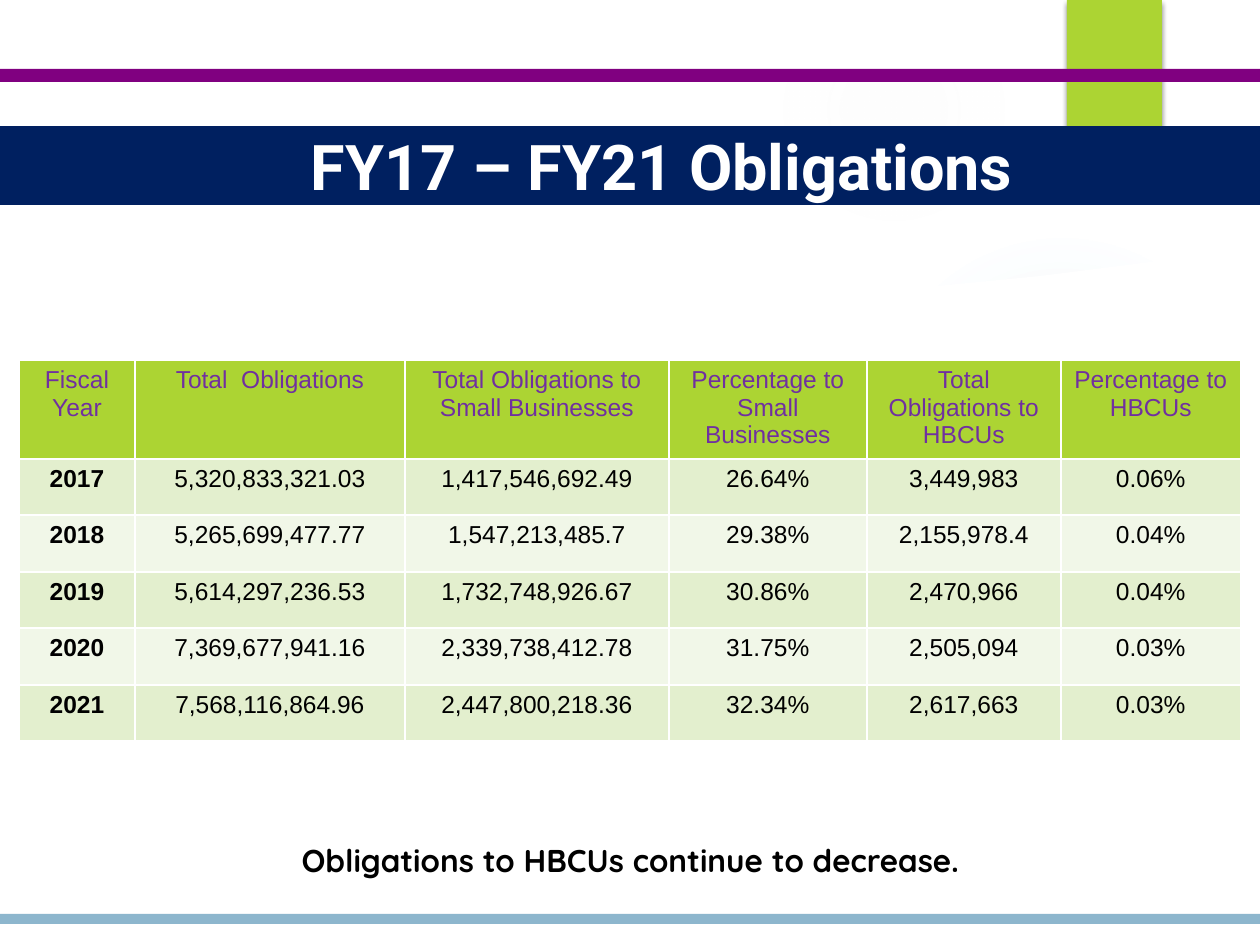
from lxml import etree
from pptx import Presentation
from pptx.dml.color import RGBColor
from pptx.enum.shapes import MSO_SHAPE
from pptx.enum.text import MSO_ANCHOR, PP_ALIGN
from pptx.oxml import parse_xml
from pptx.oxml.ns import nsdecls, qn
from pptx.util import Emu, Pt

RECTANGLE, OVAL = MSO_SHAPE.RECTANGLE, MSO_SHAPE.OVAL
CENTER = PP_ALIGN.CENTER
MIDDLE = MSO_ANCHOR.MIDDLE
EMU_PER_PX = 914400 / 126

COLORS = {
    "white": "FFFFFF", "black": "000000", "lime": "ACD433", "purple": "800080",
    "sky": "8DB6CD", "navy": "002060", "violet": "7030A0",
    "odd_row": "E3EFCE", "even_row": "F1F7E8", "aqua": "75CEEC", "mist": "F7F7F7",
}

GLOWS = [
    ("aqua", 868, 231, 388, [(0, 7), (36, 6), (69, 0)]),
    ("aqua", 0, 368, 577, [(0, 11), (36, 10), (75, 0)]),
    ("mist", 784, 0, 220, [(0, 14), (36, 7), (73, 0)]),
    ("mist", 868, 809, 136, [(0, 14), (36, 7), (66, 0)]),
    ("aqua", 0, 399, 325, [(0, 8), (36, 8), (72, 0)]),
]
SWOOSH = [(879, 267), (941, 276), (1031, 283), (1126, 288), (1203, 290), (1204, 247),
          (1139, 256), (1073, 261), (1010, 263), (950, 263), (876, 260)]
PANEL = [(67, 256), (67, 881), (1193, 881), (1193, 256), (1142, 263), (1040, 276),
         (937, 286), (837, 291), (740, 295), (597, 295), (467, 291), (349, 285),
         (218, 273), (125, 263)]
FRAME_OUTSIDE = [(0, 0), (0, 945), (1260, 945), (1260, 0)]
FRAME_INSIDE = [(1191, 876), (71, 876), (71, 71), (1191, 71)]

BARS = [
    ("lime", 1067, 0, 95, 151),
    ("purple", 0, 69, 1260, 13),
    ("sky", 0, 914, 1260, 10),
]

COLUMN_WIDTHS = [116, 270, 264, 198, 194, 180]
ROW_HEIGHTS = [99, 56, 57, 56, 57, 56]
OBLIGATIONS = [
    ["Fiscal Year", "Total  Obligations", "Total Obligations to Small Businesses",
     "Percentage to Small Businesses", "Total Obligations to HBCUs", "Percentage to HBCUs"],
    ["2017", "5,320,833,321.03", "1,417,546,692.49", "26.64%", "3,449,983", "0.06%"],
    ["2018", "5,265,699,477.77", "1,547,213,485.7", "29.38%", "2,155,978.4", "0.04%"],
    ["2019", "5,614,297,236.53", "1,732,748,926.67", "30.86%", "2,470,966", "0.04%"],
    ["2020", "7,369,677,941.16", "2,339,738,412.78", "31.75%", "2,505,094", "0.03%"],
    ["2021", "7,568,116,864.96", "2,447,800,218.36", "32.34%", "2,617,663", "0.03%"],
]

TITLE_FORMAT = {"name": "Roboto", "size": Pt(36), "bold": True}
NOTE_FORMAT = {"name": "Quicksand", "size": Pt(18), "bold": True}
CELL_FORMAT = {"name": "Arial", "size": Pt(14)}


def px(length):
    """Turn pixels into EMU."""
    return Emu(round(length * EMU_PER_PX))


def rgb(name):
    """Look up a named colour."""
    return RGBColor.from_string(COLORS[name])


def write_text(frame, text, color, formats):
    """Fill a text frame with one centred, formatted paragraph."""
    para = frame.paragraphs[0]
    para.alignment = CENTER
    span = para.add_run()
    span.text = text
    for attribute, value in formats.items():
        setattr(span.font, attribute, value)
    span.font.color.rgb = rgb(color)
    return para


def paint(shape, color):
    """Give a shape a flat fill without line or shadow."""
    shape.shadow.inherit = False
    shape.fill.solid()
    shape.fill.fore_color.rgb = rgb(color)
    shape.line.fill.background()
    return shape


def add_bar(page, color, *place):
    """Add a plain filled rectangle."""
    return paint(page.shapes.add_shape(RECTANGLE, *map(px, place)), color)


def add_glow(page, color, left, top, size, stops):
    """Add a circle that fades out from its centre."""
    glow = page.shapes.add_shape(OVAL, *map(px, (left, top, size, size)))
    glow.shadow.inherit = False
    glow.line.fill.background()
    marks = "".join(
        f'<a:gs pos="{place * 1000}"><a:srgbClr val="{COLORS[color]}">'
        f'<a:alpha val="{alpha * 1000}"/></a:srgbClr></a:gs>' for place, alpha in stops)
    glow._element.spPr.find(qn("a:prstGeom")).addnext(parse_xml(
        f'<a:gradFill {nsdecls("a")}><a:gsLst>{marks}</a:gsLst><a:path path="circle">'
        '<a:fillToRect l="50000" t="50000" r="50000" b="50000"/></a:path></a:gradFill>'))


def add_outline(page, *contours):
    """Add a white freeform made of closed contours."""
    first, *others = contours
    builder = page.shapes.build_freeform(*first[0], scale=EMU_PER_PX)
    builder.add_line_segments(first[1:], close=True)
    for contour in others:
        builder.move_to(*contour[0])
        builder.add_line_segments(contour[1:], close=True)
    return paint(builder.convert_to_shape(), "white")


def add_backdrop(page):
    """Add the faint glows and the white shapes over them."""
    for glow in GLOWS:
        add_glow(page, *glow)
    swoosh = add_outline(page, SWOOSH)
    swoosh.rotation = 350.2
    tint = swoosh._element.spPr.find(qn("a:solidFill"))[0]
    etree.SubElement(tint, qn("a:alpha"), val="20000")
    add_outline(page, PANEL)
    add_outline(page, FRAME_OUTSIDE, FRAME_INSIDE)


def add_drop_shadow(bar):
    """Give a bar a soft shadow below it."""
    effects = bar._element.spPr.find(qn("a:effectLst"))
    effects.append(parse_xml(
        f'<a:outerShdw {nsdecls("a")} blurRad="{Pt(3)}" dist="{Pt(2)}" dir="5400000" '
        f'rotWithShape="0"><a:srgbClr val="{COLORS["black"]}"><a:alpha val="45000"/>'
        '</a:srgbClr></a:outerShdw>'))


def add_title(page, text):
    """Add the title band with its indented text."""
    frame = add_bar(page, "navy", 0, 126, 1260, 79).text_frame
    frame.word_wrap = True
    frame.vertical_anchor = MIDDLE
    para = write_text(frame, text, "white", TITLE_FORMAT)
    para._p.get_or_add_pPr().set("marL", str(px(64)))


def set_borders(cell):
    """Draw white borders around a cell."""
    properties = cell._tc.get_or_add_tcPr()
    for side in "LRTB":
        line = etree.SubElement(properties, qn(f"a:ln{side}"), w=str(Pt(1)))
        fill = etree.SubElement(line, qn("a:solidFill"))
        etree.SubElement(fill, qn("a:srgbClr"), val=COLORS["white"])


def fill_cell(cell, text, row, column):
    """Write and style one table cell by its position."""
    header = row == 0
    set_borders(cell)
    cell.fill.solid()
    background = "lime" if header else "odd_row" if row % 2 else "even_row"
    cell.fill.fore_color.rgb = rgb(background)
    bold = not header and column == 0
    write_text(cell.text_frame, text, "violet" if header else "black",
               {**CELL_FORMAT, "bold": bold})


def add_obligations_table(page):
    """Add the table of obligations by fiscal year."""
    table = page.shapes.add_table(
        len(ROW_HEIGHTS), len(COLUMN_WIDTHS), px(19), px(360),
        px(sum(COLUMN_WIDTHS)), px(sum(ROW_HEIGHTS))).table
    for column, width in zip(table.columns, COLUMN_WIDTHS):
        column.width = px(width)
    for row, height in zip(table.rows, ROW_HEIGHTS):
        row.height = px(height)
    for r, texts in enumerate(OBLIGATIONS):
        for c, text in enumerate(texts):
            fill_cell(table.cell(r, c), text, r, c)


def add_note(page, text):
    """Add the closing remark under the table."""
    box = page.shapes.add_textbox(*map(px, (95, 835, 1071, 50)))
    box.text_frame.word_wrap = True
    write_text(box.text_frame, text, "black", NOTE_FORMAT)


def main():
    """Build the slide and save it."""
    deck = Presentation()
    deck.slide_width, deck.slide_height = px(1260), px(945)
    page = deck.slides.add_slide(deck.slide_layouts[6])
    add_backdrop(page)
    bars = [add_bar(page, *bar) for bar in BARS]
    add_drop_shadow(bars[0])
    add_title(page, "FY17 – FY21 Obligations")
    add_obligations_table(page)
    add_note(page, "Obligations to HBCUs continue to decrease.")
    deck.save("out.pptx")


if __name__ == "__main__":
    main()
